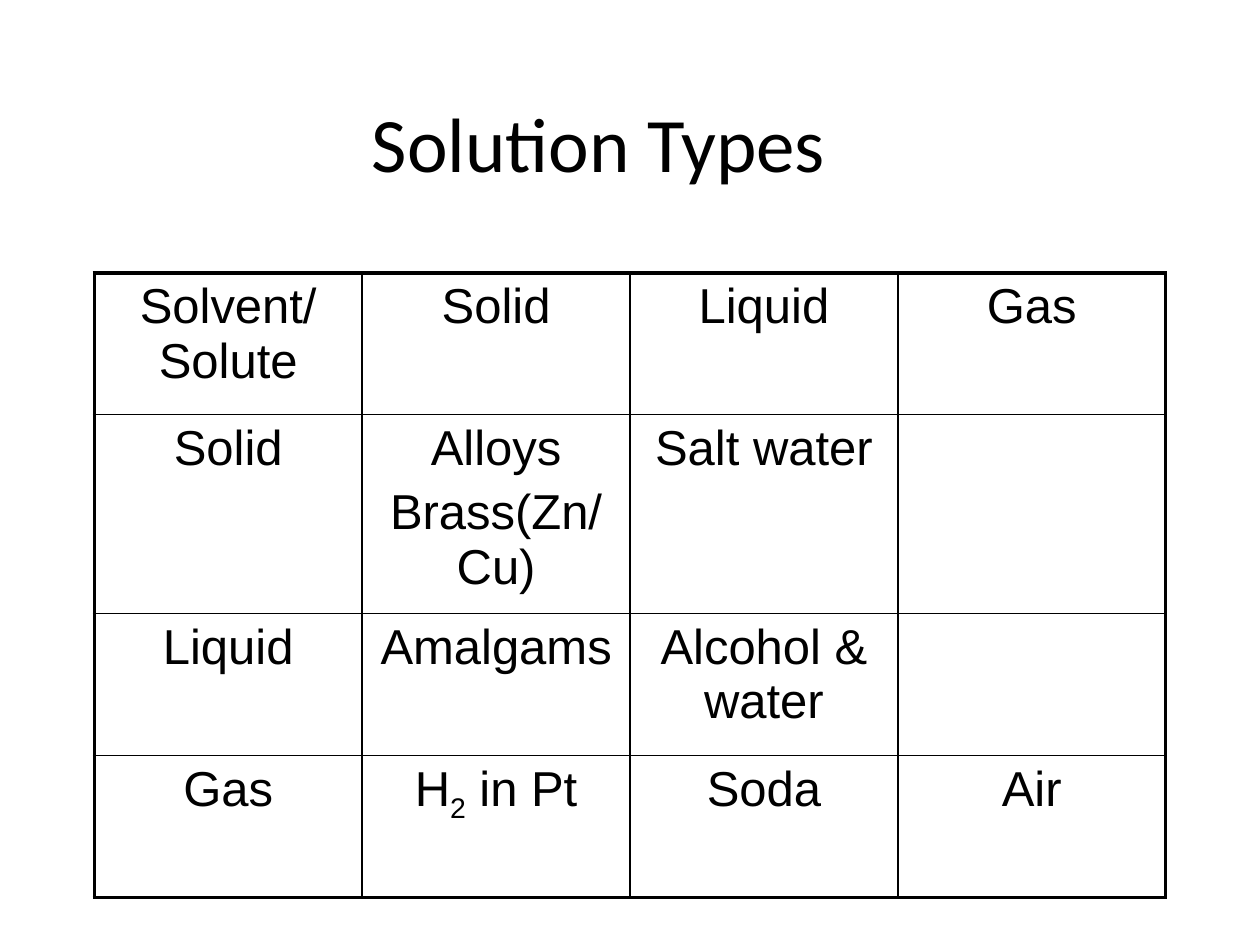
from dataclasses import dataclass

from lxml.etree import SubElement
from pptx import Presentation
from pptx.dml.color import RGBColor
from pptx.enum.text import MSO_ANCHOR as Anchor, PP_ALIGN as Align
from pptx.oxml.ns import qn
from pptx.util import Cm, Pt


@dataclass(frozen=True)
class Theme:
    ink: str = "000000"
    title_font: str = "Calibri"
    table_font: str = "Arial"
    title_size: float = 44
    table_size: float = 28
    para_gap: float = 5.6
    outer_line: float = 2.25
    inner_line: float = 1


SUBSCRIPT = "_"  # the text between two of these marks is set low

ROWS = [
    ["Solvent/ Solute", "Solid", "Liquid", "Gas"],
    ["Solid", "Alloys\nBrass(Zn/Cu)", "Salt water", ""],
    ["Liquid", "Amalgams", "Alcohol & water", ""],
    ["Gas", "H_2_ in Pt", "Soda", "Air"],
]


def write_text(frame, text, *, font, size, color, gap=0):
    """Fill a text frame with centred paragraphs, one for each line."""
    for index, line in enumerate(text.split("\n")):
        para = frame.paragraphs[0] if index == 0 else frame.add_paragraph()
        para.alignment = Align.CENTER
        para.font.size = Pt(size)
        if index:
            para.space_before = Pt(gap)
        for part, words in enumerate(line.split(SUBSCRIPT)):
            if not words:
                continue
            span = para.add_run()
            span.text = words
            span.font.name = font
            span.font.size = Pt(size)
            span.font.color.rgb = RGBColor.from_string(color)
            if part % 2:
                span.font._element.set("baseline", "-25000")


def draw_border(cell, side, width, color):
    line = SubElement(cell._tc.get_or_add_tcPr(), qn(f"a:ln{side}"), w=str(Pt(width)))
    fill = SubElement(line, qn("a:solidFill"))
    SubElement(fill, qn("a:srgbClr"), val=color)


class SlideBuilder:
    def __init__(self, page, theme):
        self.page = page
        self.theme = theme

    def title(self, text, left, top, width, height):
        box = self.page.shapes.add_textbox(Cm(left), Cm(top), Cm(width), Cm(height))
        frame = box.text_frame
        frame.word_wrap = True
        frame.vertical_anchor = Anchor.MIDDLE
        write_text(frame, text, font=self.theme.title_font,
                   size=self.theme.title_size, color=self.theme.ink)

    def table(self, rows, left, top, width, row_height):
        theme = self.theme
        last_row, last_col = len(rows) - 1, len(rows[0]) - 1
        table = self.page.shapes.add_table(
            len(rows), len(rows[0]), Cm(left), Cm(top),
            Cm(width), Cm(row_height * len(rows))).table
        table.first_row = table.horz_banding = False
        for r, row in enumerate(rows):
            for c, text in enumerate(row):
                cell = table.cell(r, c)
                on_edge = {"L": c == 0, "R": c == last_col,
                           "T": r == 0, "B": r == last_row}
                for side, outer in on_edge.items():
                    draw_border(cell, side,
                                theme.outer_line if outer else theme.inner_line,
                                theme.ink)
                cell.fill.background()
                write_text(cell.text_frame, text, font=theme.table_font,
                           size=theme.table_size, color=theme.ink,
                           gap=theme.para_gap)


def main():
    deck = Presentation()
    deck.slide_width, deck.slide_height = Cm(25.4), Cm(19.05)
    page = deck.slides.add_slide(deck.slide_layouts[6])
    builder = SlideBuilder(page, Theme())
    builder.title("Solution Types", left=0.64, top=1.27, width=22.86, height=3.18)
    builder.table(ROWS, left=1.9, top=5.5, width=21.6, row_height=2.86)
    deck.save("out.pptx")


if __name__ == "__main__":
    main()
